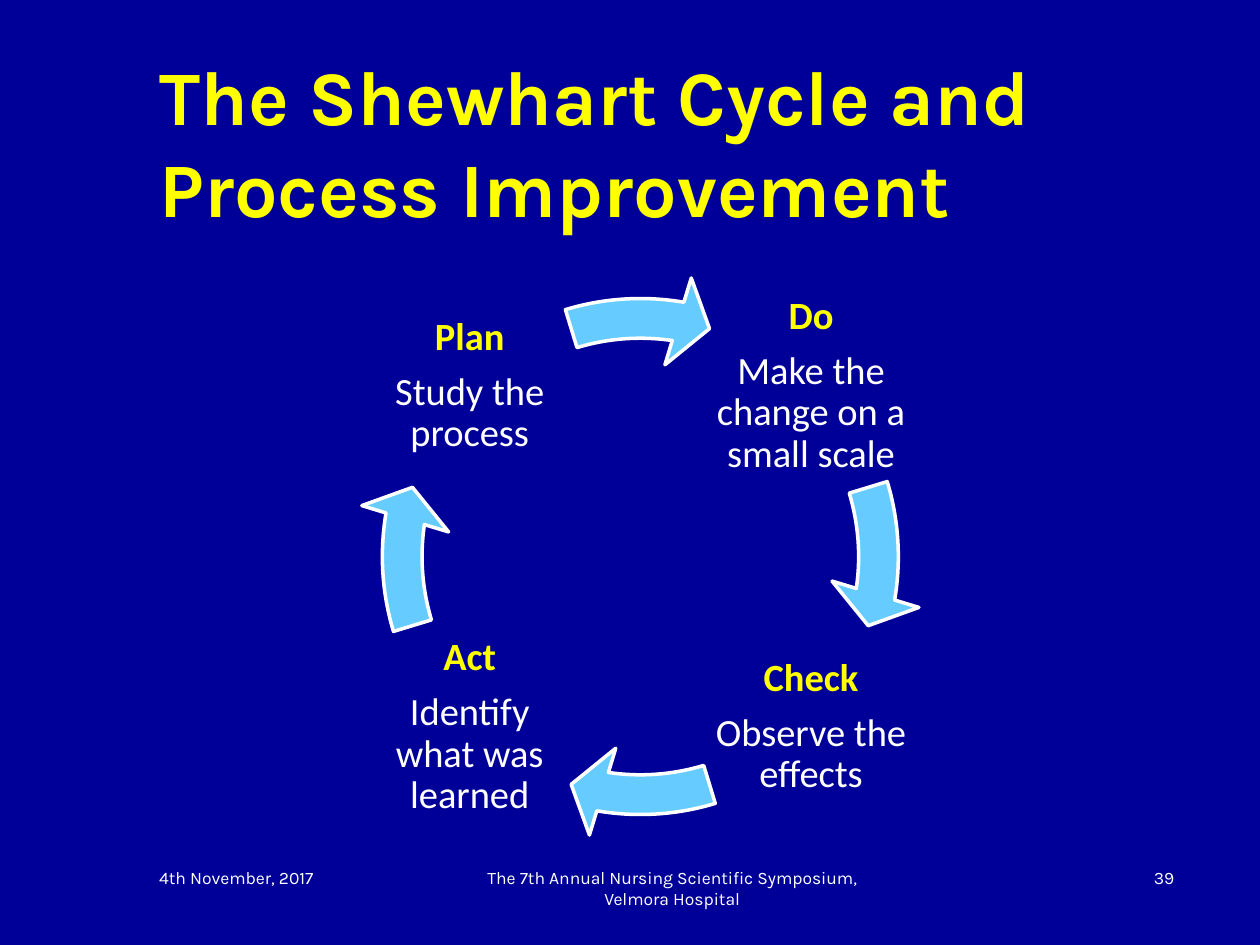
from pptx import Presentation
from pptx import util as u
from pptx.dml.color import RGBColor
from pptx.enum import shapes, text

HUES = {"back": "000099", "head": "FFFF00", "text": "FFFFFF", "arrow": "66CCFF"}
ALIGN = text.PP_ALIGN

# Cycle geometry, in cm
MID_X, MID_Y = 12.91, 11.22
REACH = 3.44   # from the centre to each step's centre, both ways
BOX = 4.06
RING = 11.43
TURN = 54      # a quarter turn in arrow units; a full one is 216

# Clockwise from top right: name, task, side, level
STEPS = [
    ("Do", "Make the change on a small scale", 1, -1),
    ("Check", "Observe the effects", 1, 1),
    ("Act", "Identify what was learned", -1, 1),
    ("Plan", "Study the process", -1, -1),
]

# Footer: words, left, width, alignment
NOTES = [
    ("4th November, 2017", 2.96, 5.29, ALIGN.LEFT),
    ("The 7th Annual Nursing Scientific Symposium, Velmora Hospital",
     9.53, 8.04, ALIGN.CENTER),
    ("39", 18.63, 5.29, ALIGN.RIGHT),
]


def hue(name):
    return RGBColor.from_string(HUES[name])


def place(item, left, top, width, height):
    item.left, item.top = u.Cm(left), u.Cm(top)
    item.width, item.height = u.Cm(width), u.Cm(height)


def add_run(par, words, size, face, tint, bold=False):
    run = par.add_run()
    run.text = words
    font = run.font
    font.size, font.name, font.bold = u.Pt(size), face, bold
    font.color.rgb = hue(tint)


def add_box(slide, left, top, width, height):
    box = slide.shapes.add_textbox(
        u.Cm(left), u.Cm(top), u.Cm(width), u.Cm(height))
    box.text_frame.word_wrap = True
    return box.text_frame


def add_title(slide, words):
    title = slide.shapes.title
    place(title, 2.96, 0.85, 20.96, 3.98)
    frame = title.text_frame
    frame.auto_size = text.MSO_AUTO_SIZE.NONE
    frame.vertical_anchor = text.MSO_ANCHOR.MIDDLE
    par = frame.paragraphs[0]
    par.alignment = ALIGN.LEFT
    add_run(par, words, 44, "Karla", "head", True)


def add_step(slide, name, task, side, level):
    frame = add_box(slide, MID_X + side * REACH - BOX / 2,
                    MID_Y + level * REACH - BOX / 2, BOX, BOX)
    frame.vertical_anchor = text.MSO_ANCHOR.MIDDLE
    frame.margin_left = frame.margin_right = u.Cm(0.08)
    frame.margin_top = frame.margin_bottom = u.Cm(0.08)
    add_run(frame.paragraphs[0], name, 22, "Calibri", "head", True)
    add_run(frame.add_paragraph(), task, 22, "Calibri", "text")
    for par in frame.paragraphs:
        par.alignment = ALIGN.CENTER
        par.line_spacing = 0.9
        par.space_after = u.Pt(7.7)


def add_arrow(slide, index):
    arrow = slide.shapes.add_shape(
        shapes.MSO_SHAPE.CIRCULAR_ARROW,
        u.Cm(MID_X - RING / 2), u.Cm(MID_Y - RING / 2),
        u.Cm(RING), u.Cm(RING))
    turn = index * TURN
    bends = (0.07, 4.66, 5.47 + turn, (205.87 + turn) % 216, 0.08)
    for spot, bend in enumerate(bends):
        arrow.adjustments[spot] = bend
    arrow.shadow.inherit = False
    arrow.fill.solid()
    arrow.fill.fore_color.rgb = hue("arrow")
    arrow.line.color.rgb = hue("text")
    arrow.line.width = u.Pt(2)


def add_note(slide, words, left, width, align):
    par = add_box(slide, left, 17.35, width, 1.27).paragraphs[0]
    par.alignment = align
    add_run(par, words, 10, "Karla", "text")


def main():
    deck = Presentation()
    deck.slide_width, deck.slide_height = u.Cm(25.4), u.Cm(19.05)
    slide = deck.slides.add_slide(deck.slide_layouts[5])  # title only
    slide.background.fill.solid()
    slide.background.fill.fore_color.rgb = hue("back")

    add_title(slide, "The Shewhart Cycle and Process Improvement")

    # Steps, each with the arrow that follows it
    for index, step in enumerate(STEPS):
        add_step(slide, *step)
        add_arrow(slide, index)

    # Footer
    for note in NOTES:
        add_note(slide, *note)

    deck.save("out.pptx")


if __name__ == "__main__":
    main()
